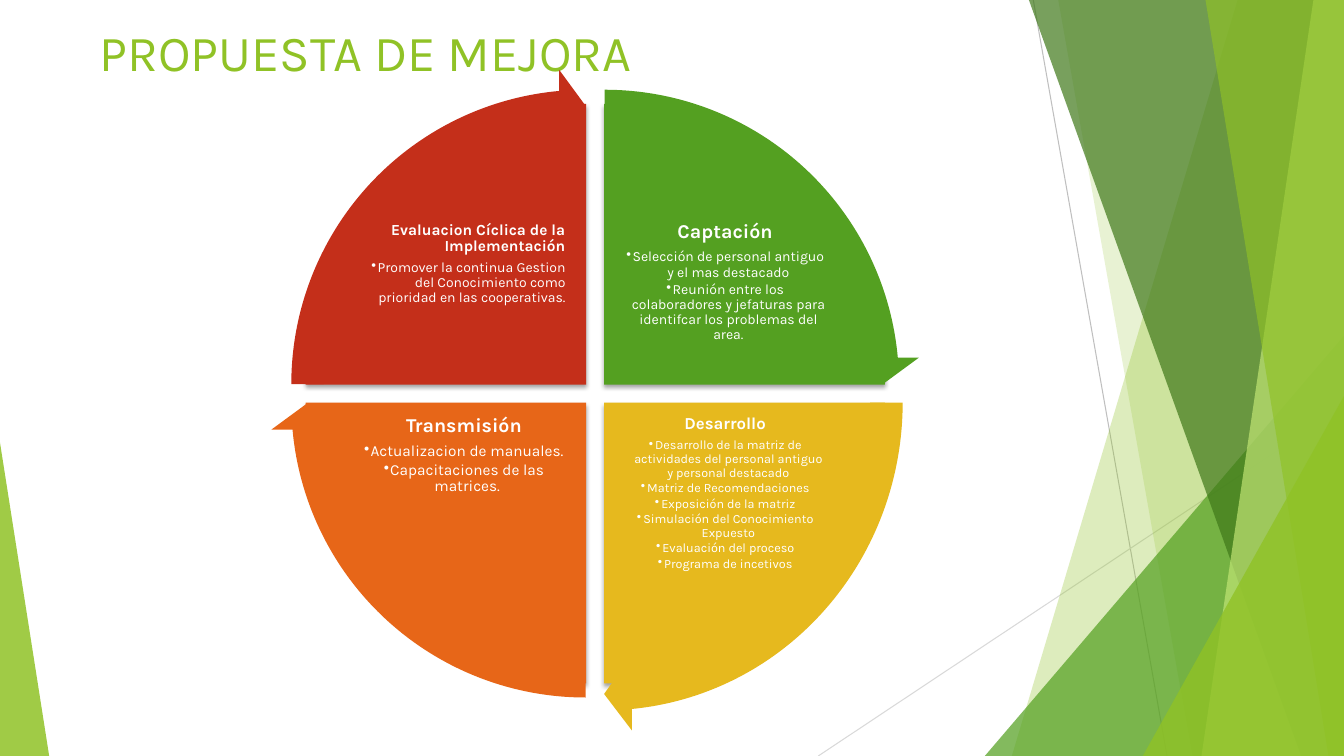
from lxml import etree
from pptx import Presentation
from pptx.dml.color import RGBColor
from pptx.enum.shapes import MSO_CONNECTOR, MSO_SHAPE
from pptx.enum.text import MSO_ANCHOR, PP_ALIGN
from pptx.oxml.ns import qn
from pptx.util import Cm, Pt

STRAIGHT = MSO_CONNECTOR.STRAIGHT
TRIANGLE, PIE, ARROW = MSO_SHAPE.ISOSCELES_TRIANGLE, MSO_SHAPE.PIE, MSO_SHAPE.CIRCULAR_ARROW
CENTER, RIGHT, LEFT = PP_ALIGN.CENTER, PP_ALIGN.RIGHT, PP_ALIGN.LEFT
TOP = MSO_ANCHOR.TOP

COLORS = {
    "lime": "90C226", "green": "54A021", "forest": "3F7819", "mint": "C0E474",
    "yellow": "E6B91E", "orange": "E76618", "red": "C42F1A",
    "gray": "BFBFBF", "silver": "D9D9D9", "white": "FFFFFF", "black": "000000",
}
WIDTH, HEIGHT = 33.87, 19.05
FULL_TURN, QUARTER = 216, 54


def paint(shape, color, opacity=100):
    """Flat fill without outline or shadow; opacity in percent."""
    shape.shadow.inherit = False
    shape.line.fill.background()
    shape.fill.solid()
    shape.fill.fore_color.rgb = RGBColor.from_string(COLORS[color])
    if opacity < 100:
        tint = shape._element.spPr.find(qn("a:solidFill"))[0]
        etree.SubElement(tint, qn("a:alpha"), val=str(opacity * 1000))


def add_text(area, lines, inset, align):
    """Lines are (text, size, color, bold, bulleted)."""
    box = page.shapes.add_textbox(*map(Cm, area))
    frame = box.text_frame
    frame_format = {"word_wrap": True, "vertical_anchor": TOP}
    for side in ("left", "right", "top", "bottom"):
        frame_format["margin_" + side] = Cm(inset[side in ("top", "bottom")])
    for name, value in frame_format.items():
        setattr(frame, name, value)
    for index, (text, size, color, bold, bulleted) in enumerate(lines):
        para = frame.add_paragraph() if index else frame.paragraphs[0]
        para.alignment = align
        span = para.add_run()
        span.text = text
        for name, value in {"name": "Karla", "size": Pt(size), "bold": bold}.items():
            setattr(span.font, name, value)
        span.font.color.rgb = RGBColor.from_string(COLORS[color])
        if color == "white":
            para.line_spacing = 0.9
            para.space_after = Pt(round(size * (0.15 if bulleted else 0.35), 1))
        if bulleted:
            para.level = 1
            properties = para._p.get_or_add_pPr()
            properties.set("marL", str(Cm(0.16)))
            properties.set("indent", str(Cm(-0.16)))
            etree.SubElement(properties, qn("a:buChar"), char="•")


deck = Presentation()
deck.slide_width, deck.slide_height = Cm(WIDTH), Cm(HEIGHT)
page = deck.slides.add_slide(deck.slide_layouts[6])

# Background lines and translucent facets
for ends, color in (
    ((26.04, 0, 29.41, HEIGHT), "gray"),
    ((WIDTH, 10.24, 20.62, HEIGHT), "silver"),
):
    line = page.shapes.add_connector(STRAIGHT, *map(Cm, ends))
    line.line.color.rgb = RGBColor.from_string(COLORS[color])
    line.line.width = Pt(0.75)
    etree.SubElement(line._element.spPr, qn("a:effectLst"))

# A facet is (top x, bottom x) up to the right edge;
# a triangle is (left, top, width, apex position) down to the bottom edge
for outline, color, opacity in (
    ((31.19, 25.5), "lime", 30),
    ((26.67, 30.05), "lime", 20),
    ((24.82, 8.46, 9.05, 1), "green", 72),
    ((25.93, 32.79), "forest", 70),
    ((33.1, 30.28), "mint", 70),
    ((30.38, 33.48), "lime", 65),
    ((28.8, 9.98, 5.07, 1), "lime", 80),
    ((0, 11.15, 1.24, 0), "lime", 85),
):
    if len(outline) == 2:
        top_x, bottom_x = outline
        builder = page.shapes.build_freeform(Cm(top_x), Cm(0))
        corners = ((WIDTH, 0), (WIDTH, HEIGHT), (bottom_x, HEIGHT))
        builder.add_line_segments([(Cm(x), Cm(y)) for x, y in corners], close=True)
        facet = builder.convert_to_shape()
    else:
        left, top, width, apex = outline
        facet = page.shapes.add_shape(
            TRIANGLE, Cm(left), Cm(top), Cm(width), Cm(HEIGHT - top))
        facet.adjustments[0] = apex
    paint(facet, color, opacity)

add_text((2.26, 0.41, 23.88, 3.66),
         [("PROPUESTA DE MEJORA", 36, "lime", False, False)], (0.25, 0.13), LEFT)

# Cycle stages, clockwise from the top right
STAGES = [
    {"color": "green", "pie": (8.15, 2.62), "text": (15.67, 5.54),
     "arrow": (7.29, 1.73, 15.9, 15.9), "sizes": (14, 10), "align": CENTER,
     "heading": "Captación",
     "points": ["Selección de personal antiguo y el mas destacado",
                "Reunión entre los colaboradores y jefaturas para identifcar "
                "los problemas del area."]},
    {"color": "yellow", "pie": (8.15, 3.07), "text": (15.67, 10.41),
     "arrow": (7.16, 1.85, 16.13, 16.59), "sizes": (12, 9), "align": CENTER,
     "heading": "Desarrollo",
     "points": ["Desarrollo de la matriz de actividades del personal antiguo "
                "y personal destacado",
                "Matriz de Recomendaciones", "Exposición de la matriz",
                "Simulación del Conocimiento Expuesto",
                "Evaluación del proceso", "Programa de incetivos"]},
    {"color": "orange", "pie": (7.7, 3.07), "text": (9.09, 10.41),
     "arrow": (6.81, 2.21, 15.9, 15.9), "sizes": (14, 11), "align": CENTER,
     "heading": "Transmisión",
     "points": ["Actualizacion de manuales.", "Capacitaciones de las matrices."]},
    {"color": "red", "pie": (7.7, 2.62), "text": (9.09, 5.54),
     "arrow": (6.81, 1.73, 15.9, 15.9), "sizes": (11, 10), "align": RIGHT,
     "heading": "Evaluacion Cíclica de la Implementación",
     "points": ["Promover la continua Gestion del Conocimiento como prioridad "
                "en las cooperativas."]},
]
starts = [(FULL_TURN - QUARTER + index * QUARTER) % FULL_TURN for index in range(len(STAGES))]

for stage, start in zip(STAGES, starts):
    quadrant = page.shapes.add_shape(PIE, *map(Cm, (*stage["pie"], 14.15, 14.15)))
    quadrant.adjustments[0] = start
    quadrant.adjustments[1] = (start + QUARTER) % FULL_TURN
    paint(quadrant, stage["color"])
    shadow = etree.SubElement(
        quadrant._element.spPr.find(qn("a:effectLst")), qn("a:outerShdw"),
        blurRad=str(Pt(3)), dist=str(Pt(2)), dir="5400000", rotWithShape="0")
    shade = etree.SubElement(shadow, qn("a:srgbClr"), val=COLORS["black"])
    etree.SubElement(shade, qn("a:alpha"), val="35000")

    heading_size, point_size = stage["sizes"]
    lines = [(stage["heading"], heading_size, "white", True, False)]
    lines += [(point, point_size, "white", False, True) for point in stage["points"]]
    add_text((*stage["text"], 5.21, 3.86), lines, (0.05, 0.05), stage["align"])

for stage, start in zip(STAGES, starts):
    arrow = page.shapes.add_shape(ARROW, *map(Cm, stage["arrow"]))
    tip = 3.275
    for index, value in enumerate((0.051, tip, start + QUARTER - tip, start, 0.059)):
        arrow.adjustments[index] = value
    paint(arrow, stage["color"])

deck.save("out.pptx")
